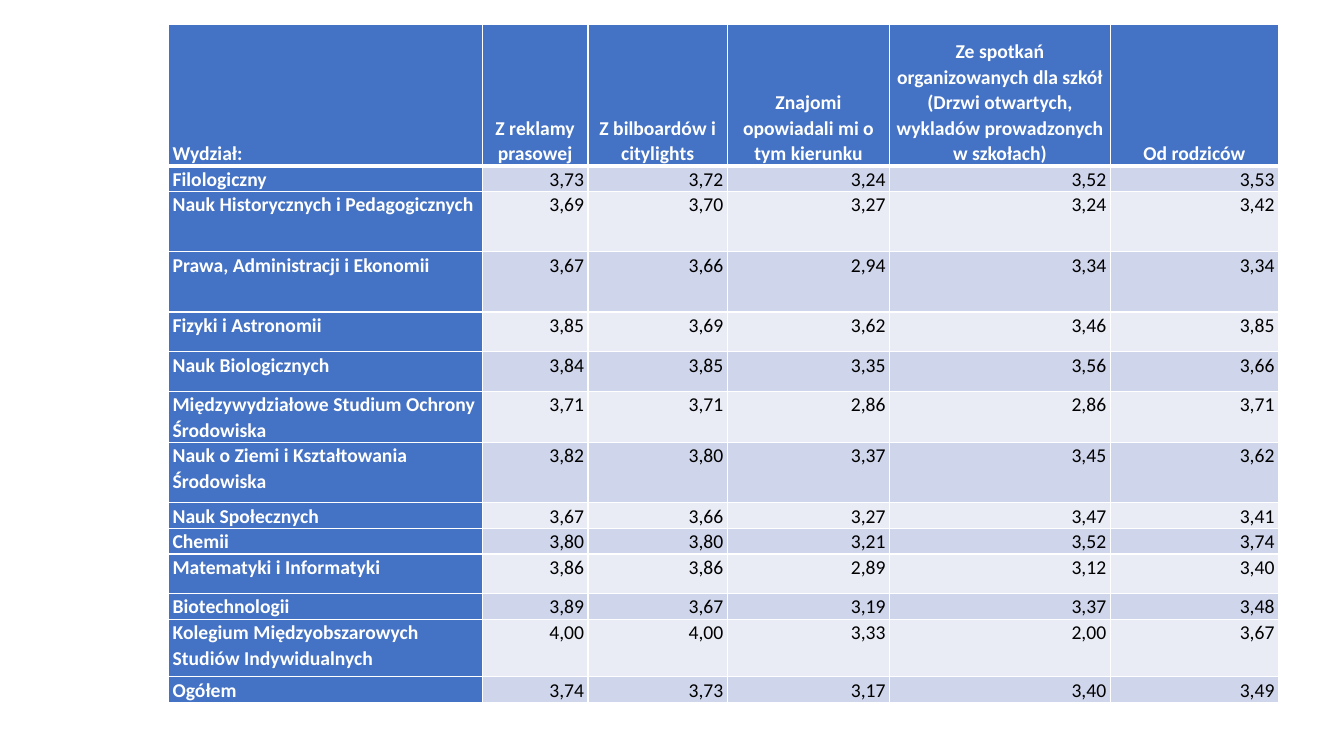
from lxml import etree
from pptx import Presentation
from pptx.dml.color import RGBColor
from pptx.enum.text import MSO_ANCHOR, PP_ALIGN
from pptx.oxml.ns import qn
from pptx.util import Cm, Pt

LEFT, CENTER, RIGHT = PP_ALIGN.LEFT, PP_ALIGN.CENTER, PP_ALIGN.RIGHT
TOP, BOTTOM = MSO_ANCHOR.TOP, MSO_ANCHOR.BOTTOM
BLANK_LAYOUT = 6

COLORS = {
    "header": "4472C4",
    "band_dark": "CFD5EA",
    "band_light": "E9EBF5",
    "white": "FFFFFF",
    "black": "000000",
}

COLUMN_WIDTHS = [7.9, 2.67, 3.51, 4.09, 5.56, 4.24]
HEADER_HEIGHT = 3.56
HEADINGS = [
    "Wydział:",
    "Z reklamy prasowej",
    "Z bilboardów i citylights",
    "Znajomi opowiadali mi o tym kierunku",
    "Ze spotkań organizowanych dla szkół "
    "(Drzwi otwartych, wykladów prowadzonych w szkołach)",
    "Od rodziców",
]
# Row height in cm, faculty, scores
FACULTIES = [
    (0.51, "Filologiczny", "3,73 3,72 3,24 3,52 3,53"),
    (1.52, "Nauk Historycznych i Pedagogicznych", "3,69 3,70 3,27 3,24 3,42"),
    (1.52, "Prawa, Administracji i Ekonomii", "3,67 3,66 2,94 3,34 3,34"),
    (1, "Fizyki i Astronomii", "3,85 3,69 3,62 3,46 3,85"),
    (1, "Nauk Biologicznych", "3,84 3,85 3,35 3,56 3,66"),
    (1, "Międzywydziałowe Studium Ochrony Środowiska", "3,71 3,71 2,86 2,86 3,71"),
    (1.52, "Nauk o Ziemi i Kształtowania Środowiska", "3,82 3,80 3,37 3,45 3,62"),
    (0.51, "Nauk Społecznych", "3,67 3,66 3,27 3,47 3,41"),
    (0.51, "Chemii", "3,80 3,80 3,21 3,52 3,74"),
    (1, "Matematyki i Informatyki", "3,86 3,86 2,89 3,12 3,40"),
    (0.51, "Biotechnologii", "3,89 3,67 3,19 3,37 3,48"),
    (1.45, "Kolegium Międzyobszarowych Studiów Indywidualnych",
     "4,00 4,00 3,33 2,00 3,67"),
    (0.51, "Ogółem", "3,74 3,73 3,17 3,40 3,49"),
]


def set_borders(cell, top=1, bottom=1):
    """Draw white borders; widths are in points."""
    tc_pr = cell._tc.get_or_add_tcPr()
    for side, width in (("L", 1), ("R", 1), ("T", top), ("B", bottom)):
        ln = etree.SubElement(tc_pr, qn(f"a:ln{side}"), w=str(Pt(width)))
        fill = etree.SubElement(ln, qn("a:solidFill"))
        etree.SubElement(fill, qn("a:srgbClr"), val=COLORS["white"])


def fill_cell(cell, text, fill, color="white", bold=True, align=LEFT, anchor=TOP):
    cell.fill.solid()
    cell.fill.fore_color.rgb = RGBColor.from_string(COLORS[fill])
    cell.margin_left = cell.margin_right = Cm(0.1)
    cell.margin_top = cell.margin_bottom = 0
    cell.vertical_anchor = anchor
    p = cell.text_frame.paragraphs[0]
    p.alignment = align
    p.line_spacing = 1.07
    p.space_after = Pt(8)
    r = p.add_run()
    r.text = text
    r.font.name = "Calibri"
    r.font.size = Pt(14)
    r.font.bold = bold
    r.font.color.rgb = RGBColor.from_string(COLORS[color])


def add_score_table(slide):
    heights = [HEADER_HEIGHT] + [height for height, _, _ in FACULTIES]
    frame = slide.shapes.add_table(
        len(heights), len(COLUMN_WIDTHS), Cm(4.25), Cm(0.62),
        Cm(sum(COLUMN_WIDTHS)), Cm(sum(heights)))
    table = frame.table
    for column, width in zip(table.columns, COLUMN_WIDTHS):
        column.width = Cm(width)
    for row, height in zip(table.rows, heights):
        row.height = Cm(height)

    for col, heading in enumerate(HEADINGS):
        cell = table.cell(0, col)
        set_borders(cell, bottom=3)
        fill_cell(cell, heading, "header", anchor=BOTTOM,
                  align=CENTER if col else LEFT)

    for row, (_, faculty, scores) in enumerate(FACULTIES, start=1):
        band = "band_dark" if row % 2 else "band_light"
        for col, text in enumerate([faculty] + scores.split()):
            cell = table.cell(row, col)
            set_borders(cell, top=3 if row == 1 else 1)
            if col == 0:
                fill_cell(cell, text, "header")
            else:
                fill_cell(cell, text, band, color="black", bold=False, align=RIGHT)


def main():
    prs = Presentation()
    prs.slide_width, prs.slide_height = Cm(33.87), Cm(19.05)
    slide = prs.slides.add_slide(prs.slide_layouts[BLANK_LAYOUT])
    add_score_table(slide)
    prs.save("out.pptx")


if __name__ == "__main__":
    main()
